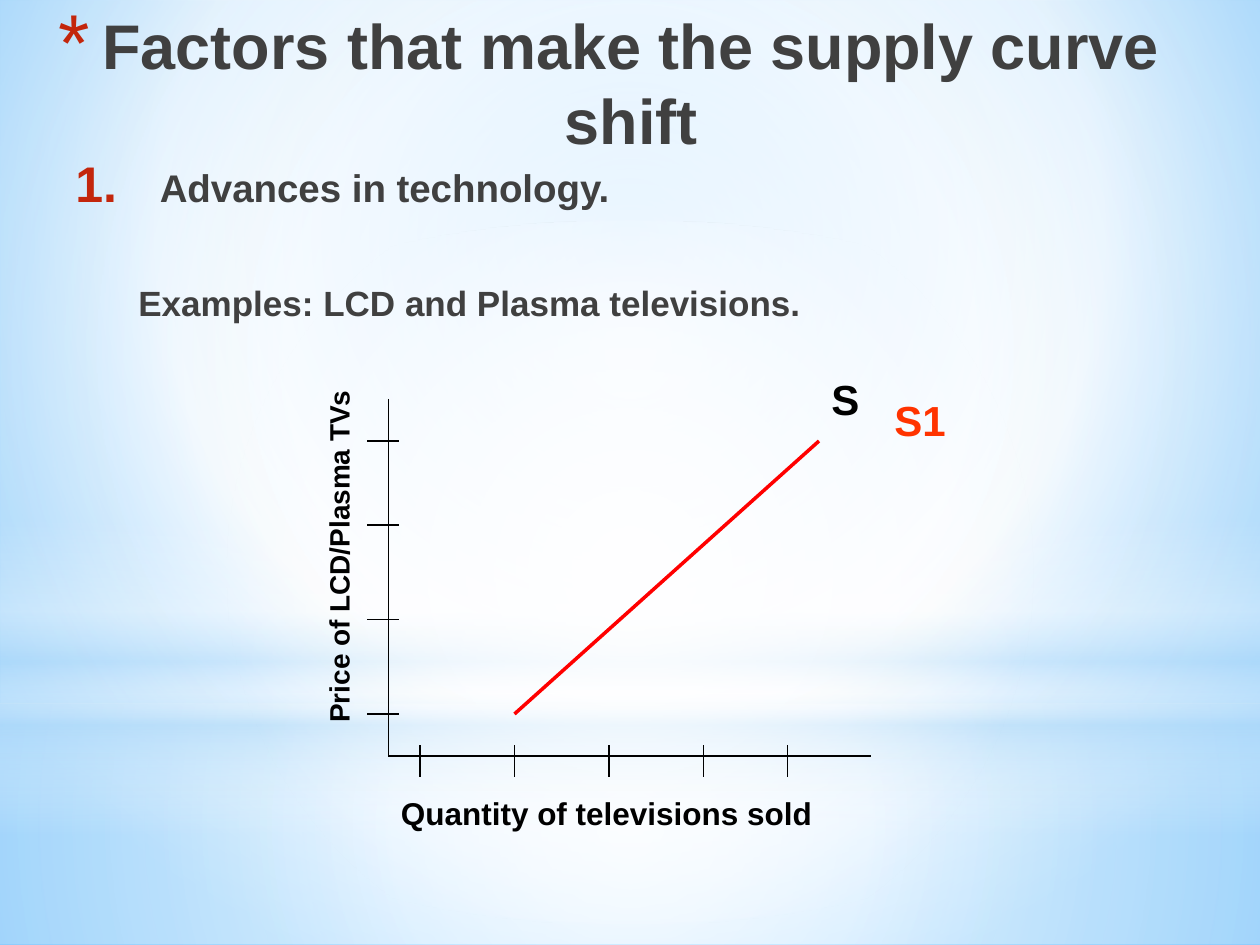
from dataclasses import dataclass

from lxml.etree import SubElement
from pptx import Presentation
from pptx.dml.color import RGBColor
from pptx.enum.shapes import MSO_CONNECTOR as Connector, MSO_SHAPE as Preset
from pptx.enum.text import PP_ALIGN as Align
from pptx.oxml import parse_xml
from pptx.oxml.ns import nsdecls, qn
from pptx.util import Inches, Pt

COLUMNS, ROWS = 120, 90


@dataclass(frozen=True)
class Theme:
    """Colours, font and type sizes of the slide."""
    font: str = "Arial"
    ink: str = "000000"
    grey: str = "404040"
    bullet: str = "C3260C"
    curve: str = "FF0000"
    shifted: str = "FF3300"
    white: str = "FFFFFF"
    haze: str = "B4DCFA"
    sky: str = "9ED5FF"
    deep_sky: str = "5BB9FF"
    title: int = 36
    point: int = 22
    example: int = 20
    label: int = 24
    quantity: int = 18
    price: int = 16
    thin: float = 0.75
    thick: float = 2


THEME = Theme()


def grid(count):
    """Return the length of a number of grid cells."""
    return Inches(count * 10 / COLUMNS)


def paint_gradient(element, stops, angle=None, focus=(50, 50, 50, 50)):
    """Replace the solid fill in an element by a linear or circular gradient."""
    marks = "".join(
        f'<a:gs pos="{position * 1000}"><a:srgbClr val="{color}">'
        f'<a:alpha val="{alpha * 1000}"/></a:srgbClr></a:gs>'
        for position, color, alpha in stops)
    if angle is None:
        sides = " ".join(f'{side}="{share * 1000}"' for side, share in zip("ltrb", focus))
        course = f'<a:path path="circle"><a:fillToRect {sides}/></a:path>'
    else:
        course = f'<a:lin ang="{angle * 60000}" scaled="0"/>'
    gradient = parse_xml(f'<a:gradFill {nsdecls("a")} rotWithShape="1">'
                         f'<a:gsLst>{marks}</a:gsLst>{course}</a:gradFill>')
    solid = element.xpath(".//a:solidFill")[0]
    solid.getparent().replace(solid, gradient)


def add_haze(slide, box, stops, preset=Preset.RECTANGLE, angle=None):
    """Add a borderless shape with a translucent gradient."""
    shape = slide.shapes.add_shape(preset, *map(grid, box))
    shape.shadow.inherit = False
    shape.line.fill.background()
    shape.fill.solid()
    shape.fill.fore_color.rgb = RGBColor.from_string(THEME.white)
    paint_gradient(shape._element, stops, angle)


def draw_backdrop(slide, box):
    """Paint the sky, the horizon and the central glow."""
    left, top, width, height = box
    white, haze = THEME.white, THEME.haze
    slide.background.fill.solid()
    slide.background.fill.fore_color.rgb = RGBColor.from_string(white)
    paint_gradient(slide._element.xpath(".//p:bg")[0],
                   [(0, THEME.sky, 100), (60, white, 100), (100, THEME.deep_sky, 100)],
                   focus=(20, 10, 20, 60))
    horizon = 67
    add_haze(slide, (left, top + horizon, width, height - horizon),
             [(0, white, 91), (37, white, 76), (100, haze, 79)])
    add_haze(slide, (left, top, width, horizon),
             [(0, white, 89), (48, white, 62), (100, haze, 79)])
    add_haze(slide, (left, top + 49.5, width, 30),
             [(0, white, 0), (29, white, 30), (45, haze, 40),
              (55, white, 26), (65, haze, 60), (100, white, 0)], angle=90)
    add_haze(slide, (left, top + 21, width, horizon),
             [(0, white, 100), (56, white, 0)], Preset.OVAL)


def write_text(frame, text, size, color=THEME.ink, align=Align.LEFT, before=0,
               margin=0, hanging=0, bullet=None, bullet_share=100):
    """Write one formatted paragraph in a text frame and return it."""
    first = frame.paragraphs[0]
    paragraph = first if not first.runs else frame.add_paragraph()
    paragraph.alignment = align
    paragraph.space_before = Pt(before)
    properties = paragraph._p.get_or_add_pPr()
    properties.set("marL", str(Inches(margin)))
    properties.set("indent", str(-Inches(hanging)))
    if bullet is not None:
        tint = SubElement(properties, qn("a:buClr"))
        SubElement(tint, qn("a:srgbClr"), val=THEME.bullet)
        SubElement(properties, qn("a:buSzPct"), val=str(bullet_share * 1000))
        SubElement(properties, qn("a:buFont"), typeface=THEME.font)
        properties.append(bullet)
    run = paragraph.add_run()
    run.text = text
    run.font.name, run.font.size, run.font.bold = THEME.font, Pt(size), True
    run.font.color.rgb = RGBColor.from_string(color)
    return paragraph


def add_text_box(slide, box):
    """Add a wrapping text box and return it."""
    shape = slide.shapes.add_textbox(*map(grid, box))
    shape.text_frame.word_wrap = True
    return shape


def add_line(slide, start, end, color=THEME.ink, width=THEME.thin):
    """Add a straight line between two grid points."""
    line = slide.shapes.add_connector(Connector.STRAIGHT, *map(grid, (*start, *end)))
    line.line.color.rgb = RGBColor.from_string(color)
    line.line.width = Pt(width)
    SubElement(line._element.spPr, qn("a:effectLst"))


def draw_title(slide, box):
    """Write the title with its asterisk."""
    star = parse_xml(f'<a:buChar {nsdecls("a")} char="*"/>')
    write_text(add_text_box(slide, box).text_frame,
               "Factors that make the supply curve shift", THEME.title, THEME.grey,
               Align.CENTER, margin=0.35, hanging=0.35, bullet=star, bullet_share=128)


def draw_points(slide, box):
    """Write the numbered factor and its examples."""
    frame = add_text_box(slide, box).text_frame
    number = parse_xml(f'<a:buAutoNum {nsdecls("a")} type="arabicPeriod"/>')
    write_text(frame, "Advances in technology.", THEME.point, THEME.grey, before=3,
               margin=0.67, hanging=0.67, bullet=number, bullet_share=130)
    write_text(frame, "Examples: LCD and Plasma televisions.", THEME.example,
               THEME.grey, before=41, margin=1.08, hanging=0.58)


def draw_supply_graph(slide, box):
    """Draw the axes, ticks, supply curve and labels."""
    left, top, width, height = box
    axis_x, axis_y = left + 2, top + height
    add_line(slide, (axis_x, top), (axis_x, axis_y))
    add_line(slide, (axis_x, axis_y), (left + width, axis_y))
    columns = [axis_x + step for step in (3, 12, 21, 30, 38)]
    rows = [axis_y - step for step in (4, 13, 22, 30)]
    for column in columns:
        add_line(slide, (column, axis_y - 1), (column, axis_y + 2))
    for row in rows:
        add_line(slide, (left, row), (left + 3, row))
    add_line(slide, (columns[0] - 1, axis_y), (columns[0] + 2, axis_y))
    curve_end = (columns[-1] + 3, rows[-1])
    add_line(slide, (columns[1], rows[0]), curve_end, THEME.curve, THEME.thick)

    price = add_text_box(slide, (left - 23.75, top + 8.8, 42, 4.4))
    price.rotation = 270
    write_text(price.text_frame, "Price of LCD/Plasma TVs", THEME.price)
    quantity = add_text_box(slide, (axis_x, axis_y + 3, 52, 4.8))
    write_text(quantity.text_frame, "Quantity of televisions sold", THEME.quantity)
    end_x, end_y = curve_end
    supply = add_text_box(slide, (end_x, end_y - 7, 5, 6))
    write_text(supply.text_frame, "S", THEME.label)
    shifted = add_text_box(slide, (end_x + 6, end_y - 5, 9, 6))
    write_text(shifted.text_frame, "S1", THEME.label, THEME.shifted)


def main():
    """Build and save the slide."""
    presentation = Presentation()
    presentation.slide_width, presentation.slide_height = grid(COLUMNS), grid(ROWS)
    slide = presentation.slides.add_slide(presentation.slide_layouts[6])
    draw_backdrop(slide, (0, 0, COLUMNS, ROWS))
    draw_title(slide, (-1, 0, 118, 15))
    draw_points(slide, (6, 15, 108, 28))
    draw_supply_graph(slide, (35, 38, 48, 34))
    presentation.save("out.pptx")


if __name__ == "__main__":
    main()
